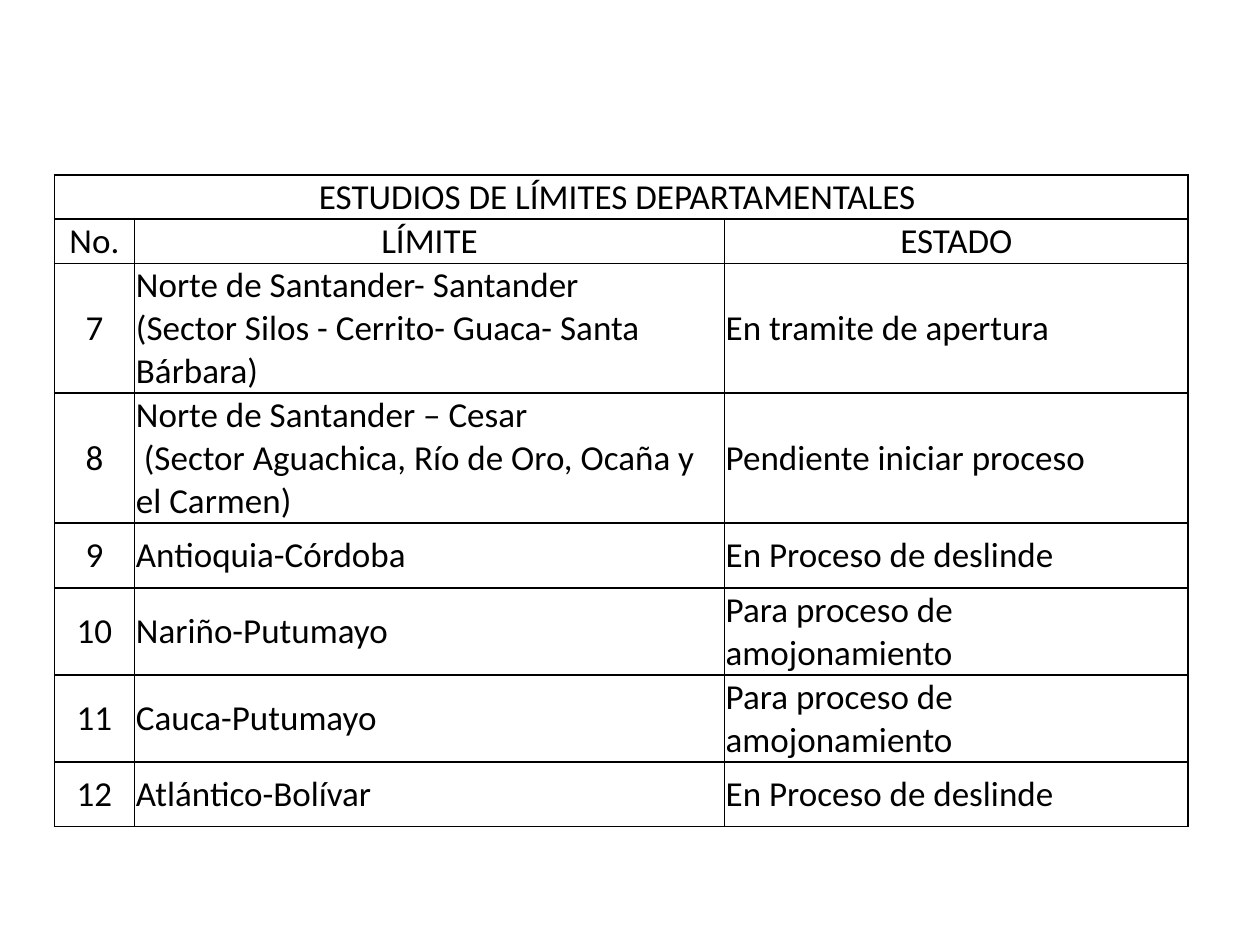
import pptx
import pptx.dml.color
import pptx.enum.text
import pptx.oxml
import pptx.oxml.ns
import pptx.util

Pt = pptx.util.Pt
PP_ALIGN = pptx.enum.text.PP_ALIGN
MSO_ANCHOR = pptx.enum.text.MSO_ANCHOR
COLORS = {"ink": "000000"}

ROWS = [
    ("ESTUDIOS DE LÍMITES DEPARTAMENTALES ", "", ""),
    ("No.", "LÍMITE", "ESTADO"),
    ("7", "Norte de Santander- Santander\n(Sector Silos - Cerrito- Guaca- Santa Bárbara)",
     "En tramite de apertura"),
    ("8", "Norte de Santander – Cesar\n (Sector Aguachica, Río de Oro, Ocaña y el Carmen)",
     "Pendiente iniciar proceso"),
    ("9", "Antioquia-Córdoba", "En Proceso de deslinde"),
    ("10", "Nariño-Putumayo", "Para proceso de amojonamiento"),
    ("11", "Cauca-Putumayo", "Para proceso de amojonamiento"),
    ("12", "Atlántico-Bolívar", "En Proceso de deslinde"),
]
WIDTHS = [46, 337, 265]
HEIGHTS = [24.5, 24.5, 73, 73, 37, 48.5, 48.5, 37]


def add_borders(cell):
    tc_pr = cell._tc.get_or_add_tcPr()
    for i, side in enumerate(("lnL", "lnR", "lnT", "lnB")):
        tc_pr.insert(i, pptx.oxml.parse_xml(
            f'<a:{side} {pptx.oxml.ns.nsdecls("a")} w="{Pt(1)}"><a:solidFill>'
            f'<a:srgbClr val="{COLORS["ink"]}"/></a:solidFill></a:{side}>'))


prs = pptx.Presentation()
prs.slide_width, prs.slide_height = Pt(720), Pt(540)
s = prs.slides.add_slide(prs.slide_layouts[6])

table = s.shapes.add_table(len(ROWS), len(WIDTHS), Pt(31), Pt(100),
                           Pt(sum(WIDTHS)), Pt(sum(HEIGHTS))).table
table.first_row = table.horz_banding = False
for column, width in zip(table.columns, WIDTHS):
    column.width = Pt(width)
for row, height in zip(table.rows, HEIGHTS):
    row.height = Pt(height)
table.cell(0, 0).merge(table.cell(0, 2))

for i, texts in enumerate(ROWS):
    for j, text in enumerate(texts):
        cell = table.cell(i, j)
        cell.fill.background()
        add_borders(cell)
        cell.margin_left = cell.margin_right = cell.margin_top = Pt(0.72)
        cell.margin_bottom = Pt(0)
        cell.vertical_anchor = MSO_ANCHOR.BOTTOM if i == 0 else MSO_ANCHOR.MIDDLE
        if cell.is_spanned:
            continue
        cell.text = text
        for p in cell.text_frame.paragraphs:
            p.alignment = PP_ALIGN.CENTER if i < 2 or j == 0 else PP_ALIGN.LEFT
            p.font.name = "Calibri"
            p.font.size = Pt(20)
            p.font.color.rgb = pptx.dml.color.RGBColor.from_string(COLORS["ink"])

prs.save("out.pptx")
